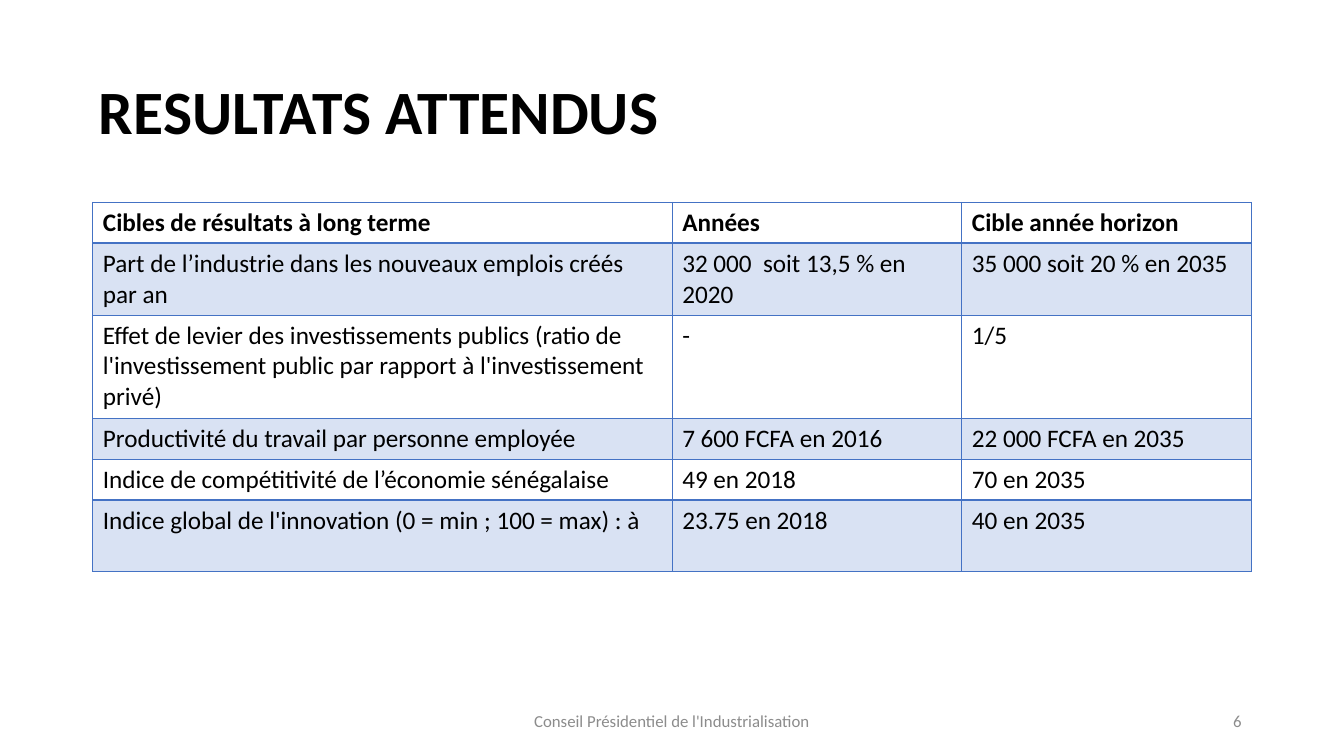
from dataclasses import dataclass

from lxml import etree
from pptx import Presentation
from pptx import util as u
from pptx.dml.color import RGBColor
from pptx.enum import text
from pptx.oxml.ns import qn


@dataclass(frozen=True)
class Theme:
    font: str = "Calibri"
    ink: str = "000000"
    muted: str = "8C8C8C"
    accent: str = "4472C4"
    band_alpha: int = 20
    title_size: int = 44
    body_size: int = 18
    footer_size: int = 12
    thin: int = 1
    thick: int = 2


class SlideBuilder:
    def __init__(self, deck, theme):
        self.theme = theme
        self.page = deck.slides.add_slide(deck.slide_layouts[5])

    def add_words(self, frame, words, size, color, bold=False, align=text.PP_ALIGN.LEFT):
        frame.word_wrap = True
        para = frame.paragraphs[0]
        para.alignment = align
        span = para.add_run()
        span.text = words
        span.font.name = self.theme.font
        span.font.size = u.Pt(size)
        span.font.bold = bold
        span.font.color.rgb = RGBColor.from_string(color)
        return para

    def title(self, words, left, top, width, height):
        box = self.page.shapes.title
        box.left, box.top, box.width, box.height = map(u.Cm, (left, top, width, height))
        frame = box.text_frame
        frame.auto_size = text.MSO_AUTO_SIZE.NONE
        frame.vertical_anchor = text.MSO_ANCHOR.MIDDLE
        para = self.add_words(frame, words, self.theme.title_size, self.theme.ink, bold=True)
        para.line_spacing = 0.9

    def footer(self, words, left, width, align):
        box = self.page.shapes.add_textbox(*map(u.Cm, (left, 17.65, width, 1.01)))
        frame = box.text_frame
        frame.vertical_anchor = text.MSO_ANCHOR.MIDDLE
        self.add_words(frame, words, self.theme.footer_size, self.theme.muted, align=align)

    def border(self, cell, widths):
        properties = cell._tc.get_or_add_tcPr()
        for position, (side, width) in enumerate(zip("LRTB", widths)):
            line = etree.Element(qn(f"a:ln{side}"), w=str(u.Pt(width)))
            fill = etree.SubElement(line, qn("a:solidFill"))
            etree.SubElement(fill, qn("a:srgbClr"), val=self.theme.accent)
            properties.insert(position, line)

    def shade(self, cell):
        cell.fill.solid()
        cell.fill.fore_color.rgb = RGBColor.from_string(self.theme.accent)
        color = cell._tc.tcPr.find(f".//{qn('a:srgbClr')}")
        etree.SubElement(color, qn("a:alpha"), val=str(self.theme.band_alpha * 1000))

    def table(self, rows, left, top, widths, heights):
        frame = self.page.shapes.add_table(
            len(rows), len(widths), u.Cm(left), u.Cm(top),
            u.Cm(sum(widths)), u.Cm(sum(heights)))
        grid = frame.table
        grid.first_row = grid.horz_banding = False
        for column, width in zip(grid.columns, widths):
            column.width = u.Cm(width)
        for index, (row, height, values) in enumerate(zip(grid.rows, heights, rows)):
            row.height = u.Cm(height)
            above = self.theme.thick if index == 1 else self.theme.thin
            below = self.theme.thick if index == 0 else self.theme.thin
            for cell, words in zip(row.cells, values):
                self.add_words(cell.text_frame, words, self.theme.body_size,
                               self.theme.ink, bold=index == 0)
                if index % 2:
                    self.shade(cell)
                else:
                    cell.fill.background()
                self.border(cell, (self.theme.thin, self.theme.thin, above, below))


TARGETS = [
    ("Cibles de résultats à long terme", "Années", "Cible année horizon"),
    ("Part de l’industrie dans les nouveaux emplois créés par an",
     "32 000  soit 13,5 % en 2020", "35 000 soit 20 % en 2035"),
    ("Effet de levier des investissements publics (ratio de l'investissement "
     "public par rapport à l'investissement privé)", "-", "1/5"),
    ("Productivité du travail par personne employée",
     "7 600 FCFA en 2016", "22 000 FCFA en 2035"),
    ("Indice de compétitivité de l’économie sénégalaise", "49 en 2018", "70 en 2035"),
    ("Indice global de l'innovation (0 = min ; 100 = max) : à",
     "23.75 en 2018", "40 en 2035"),
]


def main():
    deck = Presentation()
    deck.slide_width, deck.slide_height = u.Cm(33.87), u.Cm(19.05)
    slide = SlideBuilder(deck, Theme())
    slide.title("RESULTATS ATTENDUS", 2.24, 1.04, 29.21, 3.68)
    one_line, two_lines, three_lines = 1.03, 1.81, 2.6
    slide.table(TARGETS, 2.34, 5.1, (14.6, 7.3, 7.3),
                (one_line, two_lines, three_lines, one_line, one_line, two_lines))
    slide.footer("Conseil Présidentiel de l'Industrialisation", 11.22, 11.43,
                 text.PP_ALIGN.CENTER)
    slide.footer("6", 23.92, 7.62, text.PP_ALIGN.RIGHT)
    deck.save("out.pptx")


if __name__ == "__main__":
    main()
